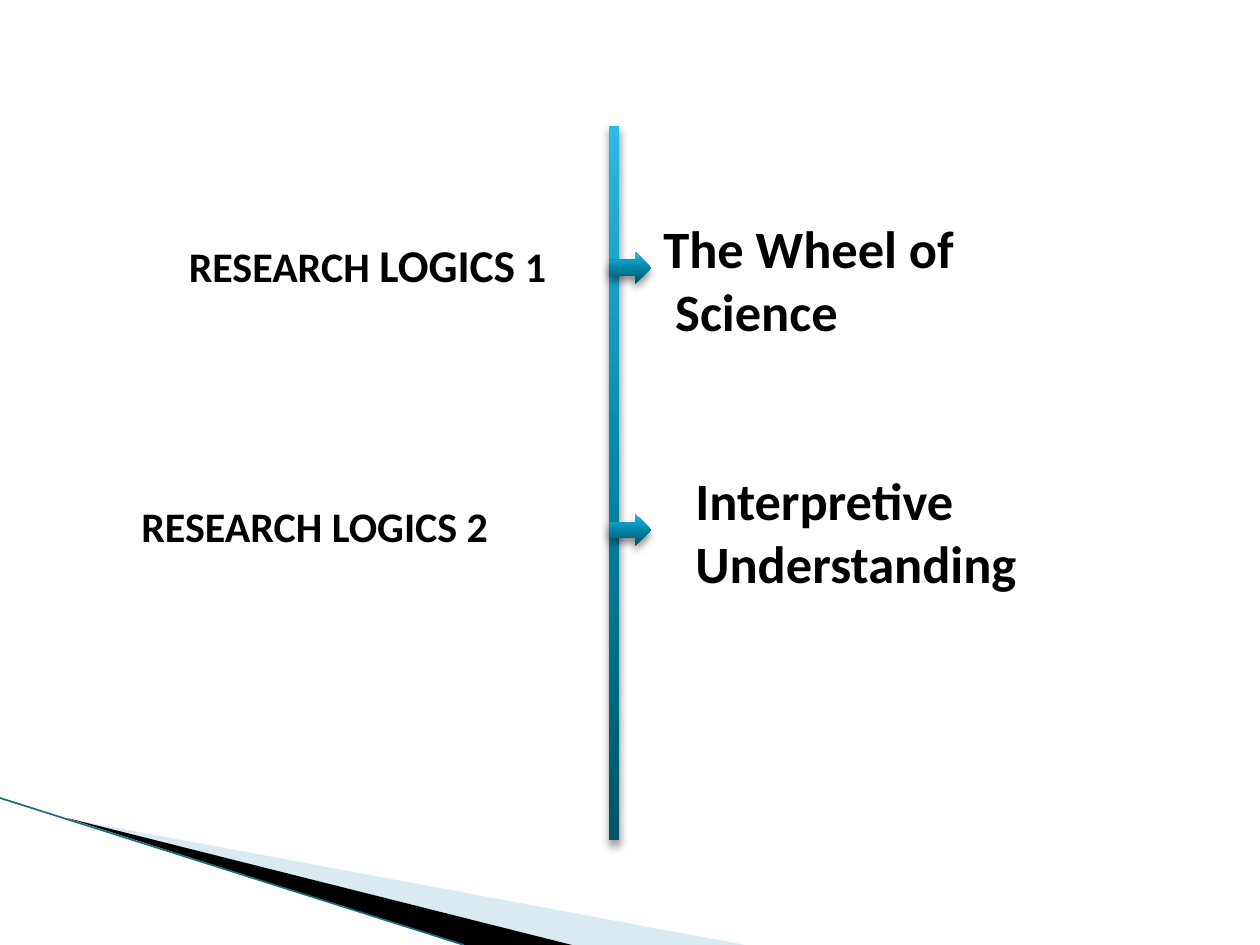
from lxml.etree import SubElement
from pptx import Presentation
from pptx.dml.color import RGBColor
from pptx.enum.shapes import MSO_CONNECTOR as Connector, MSO_SHAPE as Shape
from pptx.enum.text import MSO_AUTO_SIZE as AutoSize, PP_ALIGN as Align
from pptx.oxml import parse_xml
from pptx.oxml.ns import nsdecls, qn
from pptx.util import Pt

PX = 914400 / 126
GRADIENT = [(0, "005367"), (50, "0086A7"), (70, "0E9ABE"), (100, "2CB9E3")]


def px(*lengths):
    return [round(length * PX) for length in lengths]


def color(value):
    return RGBColor.from_string(value)


presentation = Presentation()
presentation.slide_width, presentation.slide_height = px(1260, 945)
slide = presentation.slides.add_slide(presentation.slide_layouts[6])
shapes = slide.shapes

wedges = [
    ([(69, 819), (745, 945), (572, 945)], "A0CBDC", 40),
    ([(67, 818), (572, 945), (463, 945)], "000000", 100),
]
for points, fill, opacity in wedges:
    builder = shapes.build_freeform(*points[0], scale=PX)
    builder.add_line_segments(points[1:], close=True)
    wedge = builder.convert_to_shape()
    wedge.shadow.inherit = False
    wedge.line.fill.background()
    wedge.fill.solid()
    wedge.fill.fore_color.rgb = color(fill)
    if opacity < 100:
        fill_color = wedge.fill._xPr.find(qn("a:solidFill"))[0]
        SubElement(fill_color, qn("a:alpha"), val=str(opacity * 1000))

edge = shapes.add_connector(Connector.STRAIGHT, *px(0, 798, 464, 945))
edge.line.color.rgb = color("1A6E80")
edge.line.width = Pt(0.95)
SubElement(edge._element.spPr, qn("a:effectLst"))

stops = "".join(
    f'<a:gs pos="{position * 1000}"><a:srgbClr val="{value}"/></a:gs>'
    for position, value in GRADIENT
)
gradient_xml = (
    f'<a:gradFill {nsdecls("a")} rotWithShape="1"><a:gsLst>{stops}</a:gsLst>'
    '<a:lin ang="16200000" scaled="0"/></a:gradFill>'
)
shadow_xml = (
    f'<a:outerShdw {nsdecls("a")} blurRad="{Pt(5)}" dist="{Pt(3)}" dir="5400000" '
    'rotWithShape="0"><a:srgbClr val="000000"><a:alpha val="45000"/></a:srgbClr></a:outerShdw>'
)
timeline = [
    (Shape.RECTANGLE, 609, 126, 10, 714),
    (Shape.RIGHT_ARROW, 609, 252, 42, 32),
    (Shape.RIGHT_ARROW, 609, 514, 42, 32),
]
for kind, *box in timeline:
    shape = shapes.add_shape(kind, *px(*box))
    shape.shadow.inherit = False
    shape.line.fill.background()
    shape.fill.background()
    properties = shape._element.spPr
    properties.replace(properties.find(qn("a:noFill")), parse_xml(gradient_xml))
    properties.find(qn("a:effectLst")).append(parse_xml(shadow_xml))

labels = [
    ((105, 231, 525, 68), [[("RESEARCH ", 24), ("LOGICS", 26), (" 1", 24)]], Align.CENTER, True),
    ((651, 210, 462, 140), [[("The Wheel of", 30)], [(" Science", 30)]], Align.LEFT, True),
    ((129, 494, 480, 63), [[("RESEARCH LOGICS 2", 24)]], Align.LEFT, False),
    ((683, 462, 420, 140), [[("Interpretive Understanding", 30)]], Align.LEFT, True),
]
for box, paragraphs, alignment, wrap in labels:
    text_frame = shapes.add_textbox(*px(*box)).text_frame
    text_frame.word_wrap = wrap
    text_frame.auto_size = AutoSize.SHAPE_TO_FIT_TEXT
    text_frame.text = "\n".join("".join(text for text, size in runs) for runs in paragraphs)
    for paragraph, runs in zip(text_frame.paragraphs, paragraphs):
        paragraph.alignment = alignment
        paragraph.runs[0].text = runs[0][0]
        for text, size in runs[1:]:
            paragraph.add_run().text = text
        for run, (text, size) in zip(paragraph.runs, runs):
            run.font.name = "Calibri"
            run.font.size = Pt(size)
            run.font.bold = True
            run.font.color.rgb = color("000000")

presentation.save("out.pptx")
